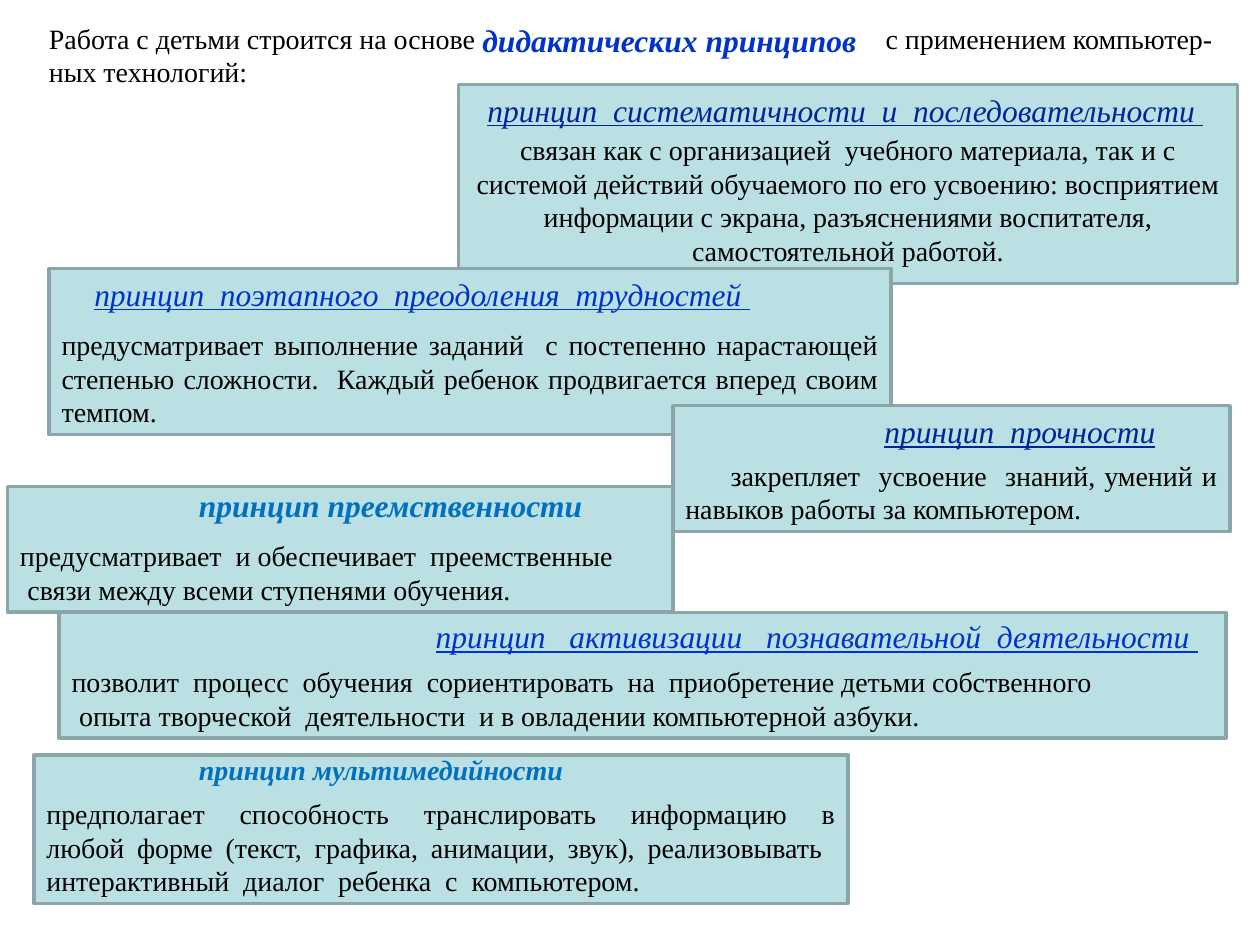
from dataclasses import dataclass

from lxml.etree import SubElement
from pptx import Presentation
from pptx.dml.color import RGBColor
from pptx.enum.shapes import MSO_SHAPE as Shape
from pptx.enum.text import MSO_ANCHOR as Anchor, PP_ALIGN as Align
from pptx.oxml.ns import qn
from pptx.util import Inches, Pt

FONT = "Times New Roman"
COLORS = {
    "text": "000000",
    "panel": "BBE0E3",
    "border": "8AA6A8",
    "navy": "00259A",
    "blue": "0033CC",
    "azure": "0070C0",
}


@dataclass
class Title:
    text: str
    left: float
    top: float
    width: float
    color: str
    size: int = 18
    bold: bool = False
    underline: bool = True
    wrap: bool = False
    height: float = 0.4


@dataclass
class Principle:
    title: Title
    body: str
    left: float
    top: float
    width: float
    height: float
    indents: tuple = (0,)  # first-line indent of each paragraph
    align: Align = Align.JUSTIFY
    margin_bottom: float = 0.05


def style_runs(paragraph, size: int, color: str, bold=False, italic=False, underline=False) -> None:
    for run in paragraph.runs:
        font = run.font
        font.name, font.size = FONT, Pt(size)
        font.bold, font.italic, font.underline = bold, italic, underline
        font.color.rgb = RGBColor.from_string(COLORS[color])


def add_title(slide, title: Title) -> None:
    box = slide.shapes.add_textbox(
        Inches(title.left), Inches(title.top), Inches(title.width), Inches(title.height))
    frame = box.text_frame
    frame.word_wrap = title.wrap
    frame.text = title.text
    style_runs(frame.paragraphs[0], title.size, title.color,
               title.bold, True, title.underline)


def add_principle(slide, principle: Principle) -> None:
    panel = slide.shapes.add_shape(
        Shape.RECTANGLE, Inches(principle.left), Inches(principle.top),
        Inches(principle.width), Inches(principle.height))
    panel.shadow.inherit = False
    panel.fill.solid()
    panel.fill.fore_color.rgb = RGBColor.from_string(COLORS["panel"])
    panel.line.color.rgb = RGBColor.from_string(COLORS["border"])
    panel.line.width = Pt(2)

    frame = panel.text_frame
    frame.word_wrap = True
    frame.vertical_anchor = Anchor.BOTTOM
    frame.margin_bottom = Inches(principle.margin_bottom)
    frame.text = principle.body
    for paragraph, indent in zip(frame.paragraphs, principle.indents):
        paragraph.alignment = principle.align
        paragraph._p.get_or_add_pPr().set("indent", str(Inches(indent)))
        style_runs(paragraph, 16, "text")
    add_title(slide, principle.title)


def add_intro(slide) -> None:
    box = slide.shapes.add_textbox(Inches(0.29), Inches(0.12), Inches(9.53), Inches(0.64))
    frame = box.text_frame
    frame.word_wrap = True
    frame.text = ("Работа с детьми строится на основе\tс применением компьютер-\n"
                  "ных технологий:")
    # The tab leaves room for the highlighted words
    tabs = SubElement(frame.paragraphs[0]._p.get_or_add_pPr(), qn("a:tabLst"))
    SubElement(tabs, qn("a:tab"), pos=str(Inches(6.64)), algn="l")
    for paragraph in frame.paragraphs:
        style_runs(paragraph, 16, "text")
    add_title(slide, Title("дидактических принципов", 3.73, 0.12, 3.39, "blue",
                           bold=True, underline=False))


PRINCIPLES = [
    Principle(
        Title("принцип  систематичности  и  последовательности ",
              3.77, 0.67, 5.99, "navy", wrap=True),
        "связан как с организацией  учебного материала, так и с системой действий "
        "обучаемого по его усвоению: восприятием информации с экрана, "
        "разъяснениями воспитателя, самостоятельной работой.",
        3.64, 0.67, 6.18, 1.58, align=Align.CENTER, margin_bottom=0.13),
    Principle(
        Title("принцип  поэтапного  преодоления  трудностей ",
              0.65, 2.13, 5.47, "blue", wrap=True),
        "предусматривает выполнение заданий  с постепенно нарастающей степенью "
        "сложности.  Каждый ребенок продвигается вперед своим темпом.",
        0.39, 2.13, 6.68, 1.32),
    Principle(
        Title("принцип  прочности", 6.92, 3.22, 2.44, "navy"),
        "закрепляет  усвоение  знаний, умений и навыков работы за компьютером.",
        5.34, 3.22, 4.42, 1, indents=(0.36,)),
    Principle(
        Title("принцип преемственности", 1.48, 3.81, 3.28, "azure",
              bold=True, underline=False),
        "предусматривает  и обеспечивает  преемственные\n"
        "связи между всеми ступенями обучения.",
        0.06, 3.86, 5.28, 1, indents=(0, 0.06)),
    Principle(
        Title("принцип   активизации   познавательной  деятельности ",
              3.36, 4.85, 6.37, "blue", wrap=True),
        "позволит  процесс  обучения  сориентировать  на  приобретение детьми собственного\n"
        "опыта творческой  деятельности  и в овладении компьютерной азбуки.",
        0.47, 4.86, 9.26, 1, indents=(0, 0.06)),
    Principle(
        Title("принцип мультимедийности", 1.48, 5.92, 3.13, "azure", size=16,
              bold=True, underline=False, height=0.37),
        "предполагает  способность  транслировать  информацию  в любой форме "
        "(текст, графика, анимации, звук), реализовывать  интерактивный  диалог  "
        "ребенка  с  компьютером.",
        0.27, 5.99, 6.46, 1.18),
]


def main() -> None:
    deck = Presentation()
    deck.slide_width, deck.slide_height = Inches(10), Inches(7.5)
    slide = deck.slides.add_slide(deck.slide_layouts[6])

    # Opening sentence
    add_intro(slide)

    # Overlapping panels, one per principle
    for principle in PRINCIPLES:
        add_principle(slide, principle)

    deck.save("out.pptx")


if __name__ == "__main__":
    main()
